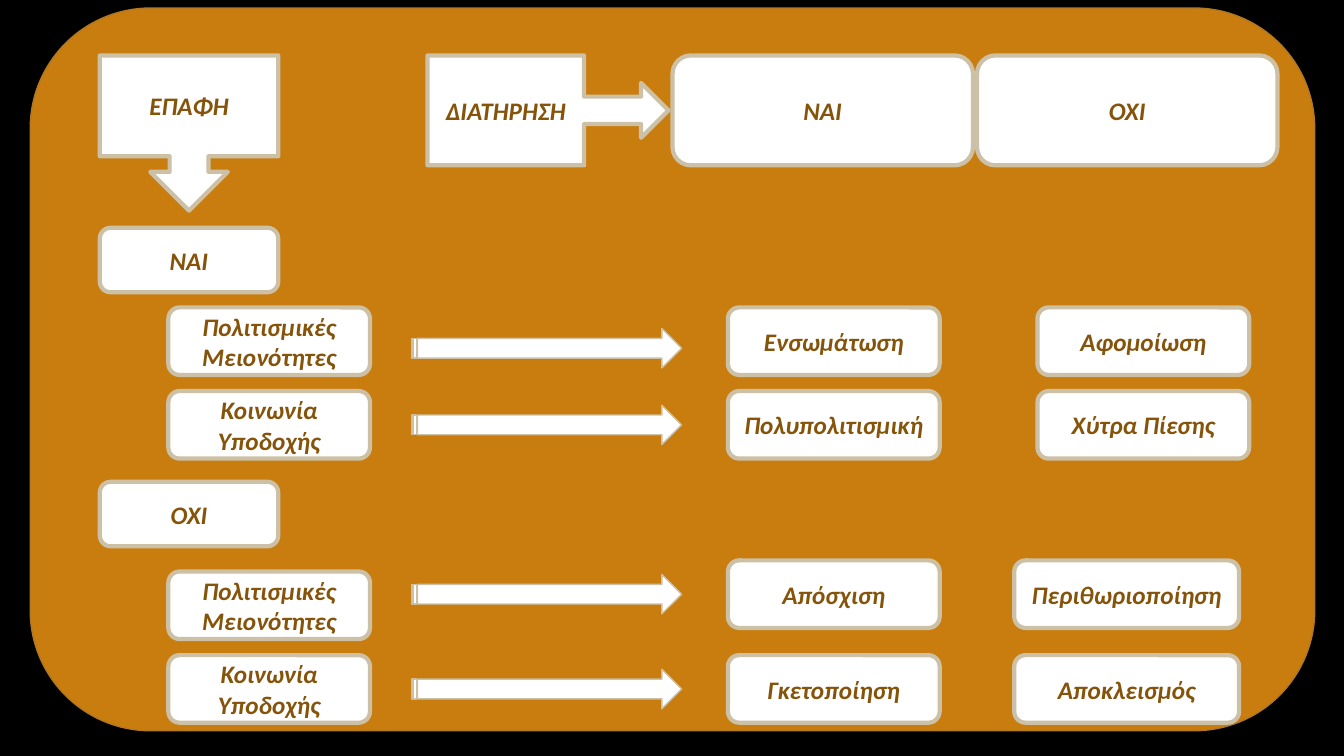
"""Builds the slide on contact and maintenance in acculturation."""
from pptx import Presentation
from pptx.dml.color import RGBColor
from pptx.enum.shapes import MSO_SHAPE as SHAPE
from pptx.enum.text import MSO_ANCHOR as ANCHOR, PP_ALIGN as ALIGN
from pptx.util import Inches, Pt

COLORS = {"back": "000000", "panel": "C87D0E", "panel_line": "B27822",
          "box": "FFFFFF", "box_line": "CCC1A7", "text": "85540A"}


def rgb(name):
    return RGBColor.from_string(COLORS[name])


def write(tf, text, font="Calibri", size=18, color="text", bold=True, italic=True):
    tf.word_wrap = True
    tf.vertical_anchor = ANCHOR.MIDDLE
    for i, line in enumerate(text.split("\n")):
        p = tf.add_paragraph() if i else tf.paragraphs[0]
        p.alignment = ALIGN.CENTER
        r = p.add_run()
        r.text = line
        r.font.name, r.font.size = font, Pt(size)
        r.font.bold, r.font.italic = bold, italic
        r.font.color.rgb = rgb(color)


class Deck:
    def __init__(self, prs):
        self.s = prs.slides.add_slide(prs.slide_layouts[6])
        self.s.background.fill.solid()
        self.s.background.fill.fore_color.rgb = rgb("back")

    def shape(self, kind, x, y, w, h, fill="box", line="box_line", width=1):
        sp = self.s.shapes.add_shape(kind, Inches(x), Inches(y), Inches(w), Inches(h))
        sp.shadow.inherit = False
        sp.fill.solid()
        sp.fill.fore_color.rgb = rgb(fill)
        sp.line.color.rgb = rgb(line)
        sp.line.width = Pt(width)
        return sp

    def panel(self, x, y, w, h):
        self.shape(SHAPE.ROUNDED_RECTANGLE, x, y, w, h, "panel", "panel_line")

    def box(self, text, x, y, w, h, kind=SHAPE.ROUNDED_RECTANGLE):
        write(self.shape(kind, x, y, w, h, width=3).text_frame, text)

    def arrow(self, y):
        self.shape(SHAPE.STRIPED_RIGHT_ARROW, 4.08, y, 2.68, 0.39)


def main():
    prs = Presentation()
    prs.slide_width, prs.slide_height = Inches(13.33), Inches(7.5)
    deck = Deck(prs)
    deck.panel(0.3, 0.08, 12.74, 7.17)

    deck.box("ΕΠΑΦΗ", 0.99, 0.55, 1.77, 1.54, SHAPE.DOWN_ARROW_CALLOUT)
    deck.box("ΔΙΑΤΗΡΗΣΗ", 4.24, 0.55, 2.39, 1.09, SHAPE.RIGHT_ARROW_CALLOUT)
    for text, x in (("ΝΑΙ", 6.67), ("ΌΧΙ", 9.69)):
        deck.box(text, x, 0.55, 2.98, 1.09)
    for text, y in (("ΝΑΙ", 2.26), ("ΟΧΙ", 4.78)):
        deck.box(text, 0.99, y, 1.77, 0.64)

    minorities, society = "Πολιτισμικές\nΜειονότητες", "Κοινωνία\nΥποδοχής"
    yes_column, no_column = (10.29, 2.1), (10.06, 2.23)
    rows = [
        (minorities, 3.05, 3.26, 3.05, "Ενσωμάτωση", "Αφομοίωση", yes_column),
        (society, 3.88, 4.02, 3.88, "Πολυπολιτισμική", "Χύτρα Πίεσης", yes_column),
        (minorities, 5.67, 5.7, 5.56, "Απόσχιση", "Περιθωριοποίηση", no_column),
        (society, 6.5, 6.64, 6.5, "Γκετοποίηση", "Αποκλεισμός", no_column),
    ]
    for group, group_y, arrow_y, result_y, kept, lost, (lost_x, lost_w) in rows:
        deck.box(group, 1.67, group_y, 2, 0.67)
        deck.arrow(arrow_y)
        deck.box(kept, 7.22, result_y, 2.1, 0.67)
        deck.box(lost, lost_x, result_y, lost_w, 0.67)

    prs.save("out.pptx")


if __name__ == "__main__":
    main()
